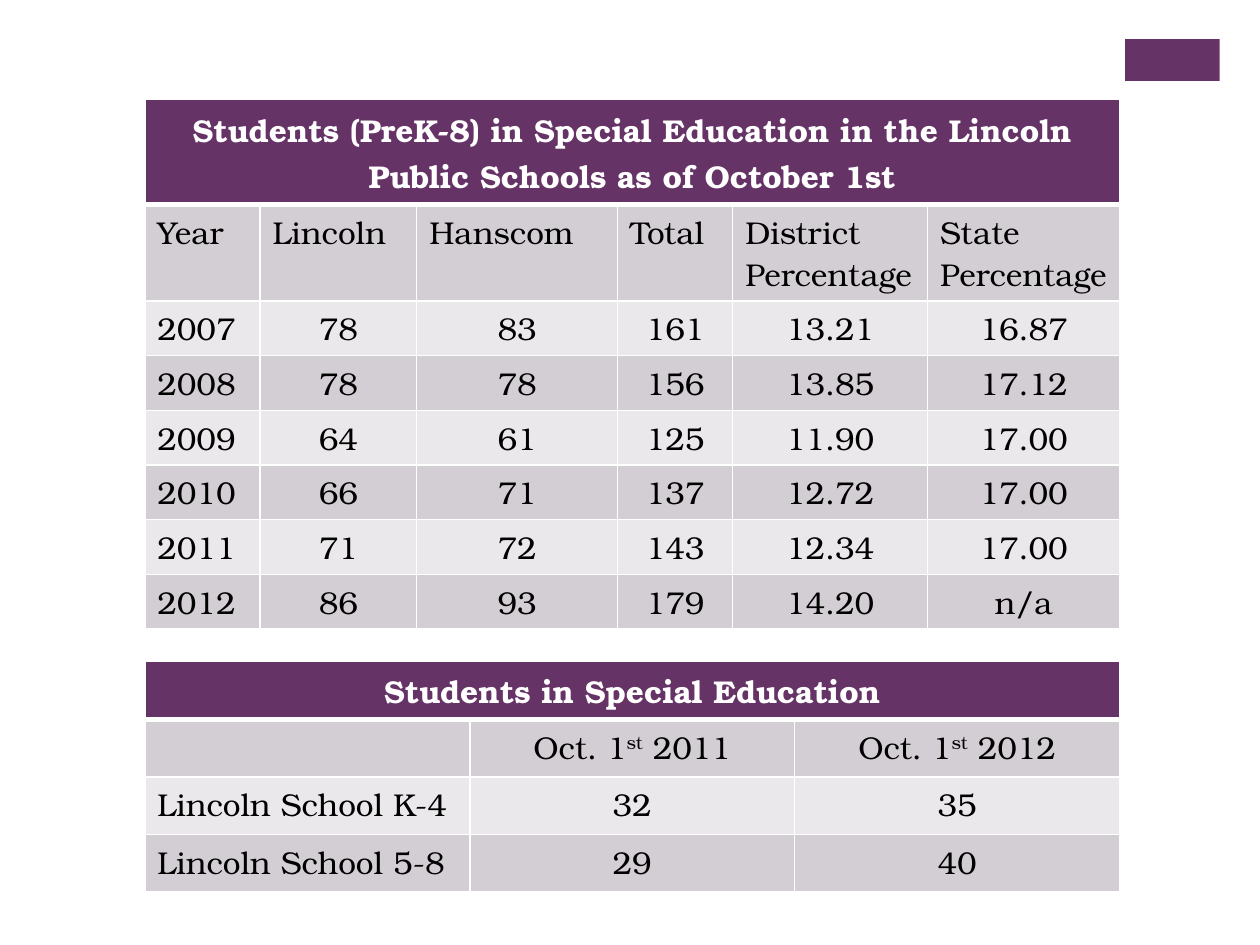
from dataclasses import dataclass

import pptx
import pptx.dml.color
import pptx.enum.shapes
import pptx.enum.text
import pptx.oxml
import pptx.oxml.ns
import pptx.presentation
import pptx.slide
import pptx.table
import pptx.util
from pptx.util import Cm

FONT = "TeX Gyre Bonum"
PURPLE, WHITE, BLACK = "663366", "FFFFFF", "000000"
BANDS = ("D3CED3", "EAE8EA")
CENTER = pptx.enum.text.PP_ALIGN.CENTER
LEFT = pptx.enum.text.PP_ALIGN.LEFT


@dataclass
class DataTable:
    title: str
    rows: list[tuple[str, ...]]
    top: float
    column_widths: list[float]
    row_height: float
    center_headings: bool


TABLES = [
    DataTable(
        title="Students (PreK-8) in Special Education in the Lincoln "
              "Public Schools as of October 1st",
        rows=[
            ("Year", "Lincoln", "Hanscom", "Total",
             "District Percentage", "State Percentage"),
            ("2007", "78", "83", "161", "13.21", "16.87"),
            ("2008", "78", "78", "156", "13.85", "17.12"),
            ("2009", "64", "61", "125", "11.90", "17.00"),
            ("2010", "66", "71", "137", "12.72", "17.00"),
            ("2011", "71", "72", "143", "12.34", "17.00"),
            ("2012", "86", "93", "179", "14.20", "n/a"),
        ],
        top=2.01,
        column_widths=[2.32, 3.16, 4.05, 2.32, 3.93, 3.87],
        row_height=1.04,
        center_headings=False,
    ),
    DataTable(
        title="Students in Special Education",
        rows=[
            ("", "Oct. 1^st^ 2011", "Oct. 1^st^ 2012"),
            ("Lincoln School K-4", "32", "35"),
            ("Lincoln School 5-8", "29", "40"),
        ],
        top=13.32,
        column_widths=[6.55] * 3,
        row_height=1.16,
        center_headings=True,
    ),
]


def color(value: str) -> pptx.dml.color.RGBColor:
    return pptx.dml.color.RGBColor.from_string(value)


def add_borders(cell: pptx.table._Cell, top: float, bottom: float) -> None:
    """Draw white borders, 1 pt at the sides; call before filling the cell."""
    properties = cell._tc.get_or_add_tcPr()
    for side, points in (("L", 1), ("R", 1), ("T", top), ("B", bottom)):
        properties.append(pptx.oxml.parse_xml(
            f'<a:ln{side} {pptx.oxml.ns.nsdecls("a")} w="{pptx.util.Pt(points)}">'
            f'<a:solidFill><a:srgbClr val="{WHITE}"/></a:solidFill></a:ln{side}>'))


def write_cell(cell: pptx.table._Cell, text: str, fill: str, font_color: str,
               bold: bool, alignment: pptx.enum.text.PP_ALIGN) -> None:
    """Fill and write a cell; text between carets is superscript."""
    cell.fill.solid()
    cell.fill.fore_color.rgb = color(fill)
    paragraph = cell.text_frame.paragraphs[0]
    paragraph.alignment = alignment
    for index, part in enumerate(text.split("^")):
        if not part:
            continue
        run = paragraph.add_run()
        run.text = part
        run.font.name = FONT
        run.font.size = pptx.util.Pt(18)
        run.font.bold = bold
        run.font.color.rgb = color(font_color)
        if index % 2:
            run._r.get_or_add_rPr().set("baseline", "30000")


def add_data_table(slide: pptx.slide.Slide, data: DataTable) -> None:
    row_count, column_count = len(data.rows) + 1, len(data.column_widths)
    table = slide.shapes.add_table(
        row_count, column_count, Cm(2.92), Cm(data.top),
        Cm(sum(data.column_widths)), Cm(data.row_height * row_count)).table
    for column, width in zip(table.columns, data.column_widths):
        column.width = Cm(width)
    for row in table.rows:
        row.height = Cm(data.row_height)

    for column_index in range(column_count):
        add_borders(table.cell(0, column_index), top=1, bottom=3)
    table.cell(0, 0).merge(table.cell(0, column_count - 1))
    write_cell(table.cell(0, 0), data.title, PURPLE, WHITE, True, CENTER)

    for row_index, values in enumerate(data.rows):
        for column_index, text in enumerate(values):
            cell = table.cell(row_index + 1, column_index)
            add_borders(cell, top=1 if row_index else 3, bottom=1)
            centered = column_index > 0 and (row_index > 0 or data.center_headings)
            write_cell(cell, text, BANDS[row_index % 2], BLACK, False,
                       CENTER if centered else LEFT)


def add_corner_block(slide: pptx.slide.Slide) -> None:
    block = slide.shapes.add_shape(
        pptx.enum.shapes.MSO_SHAPE.RECTANGLE,
        Cm(22.68), Cm(0.79), Cm(1.91), Cm(0.84))
    block.shadow.inherit = False
    block.fill.solid()
    block.fill.fore_color.rgb = color(PURPLE)
    block.line.fill.background()


def main() -> None:
    presentation = pptx.Presentation()
    presentation.slide_width, presentation.slide_height = Cm(25.4), Cm(19.05)
    slide = presentation.slides.add_slide(presentation.slide_layouts[6])
    add_corner_block(slide)
    for data in TABLES:
        add_data_table(slide, data)
    presentation.save("out.pptx")


if __name__ == "__main__":
    main()
